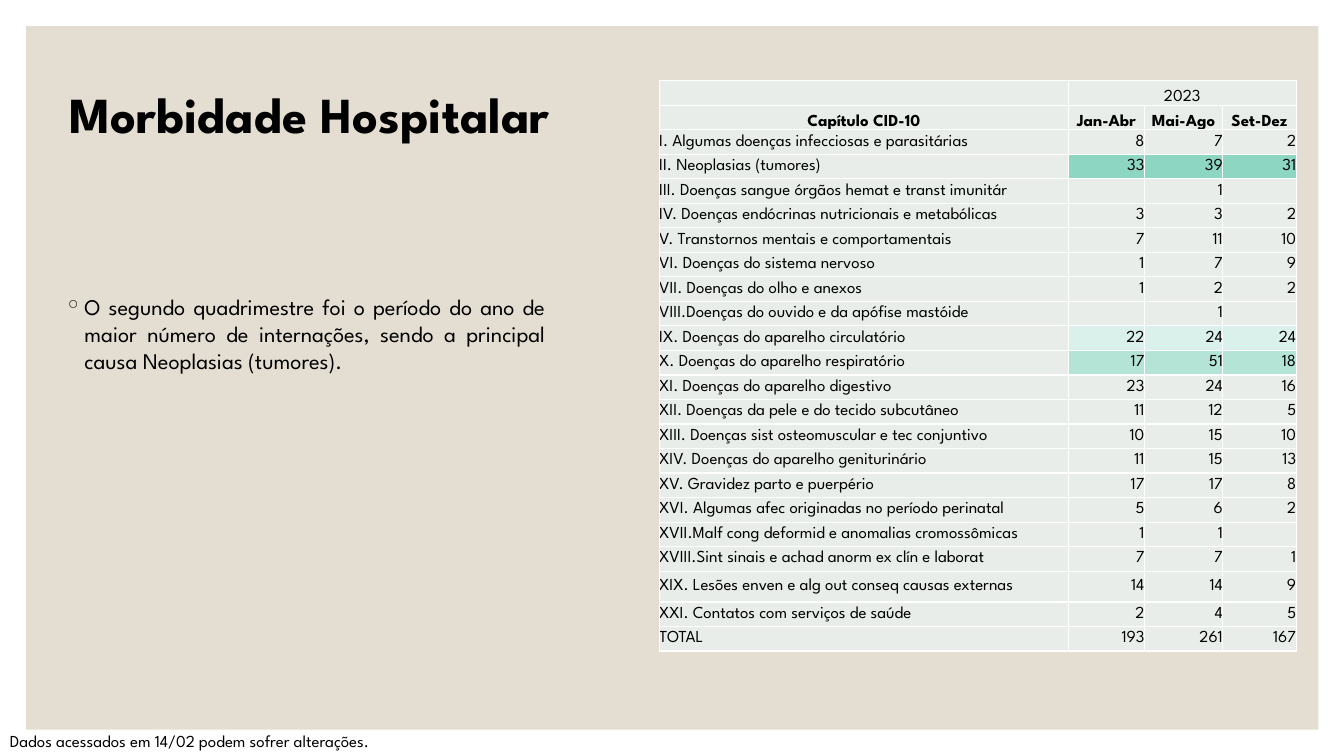
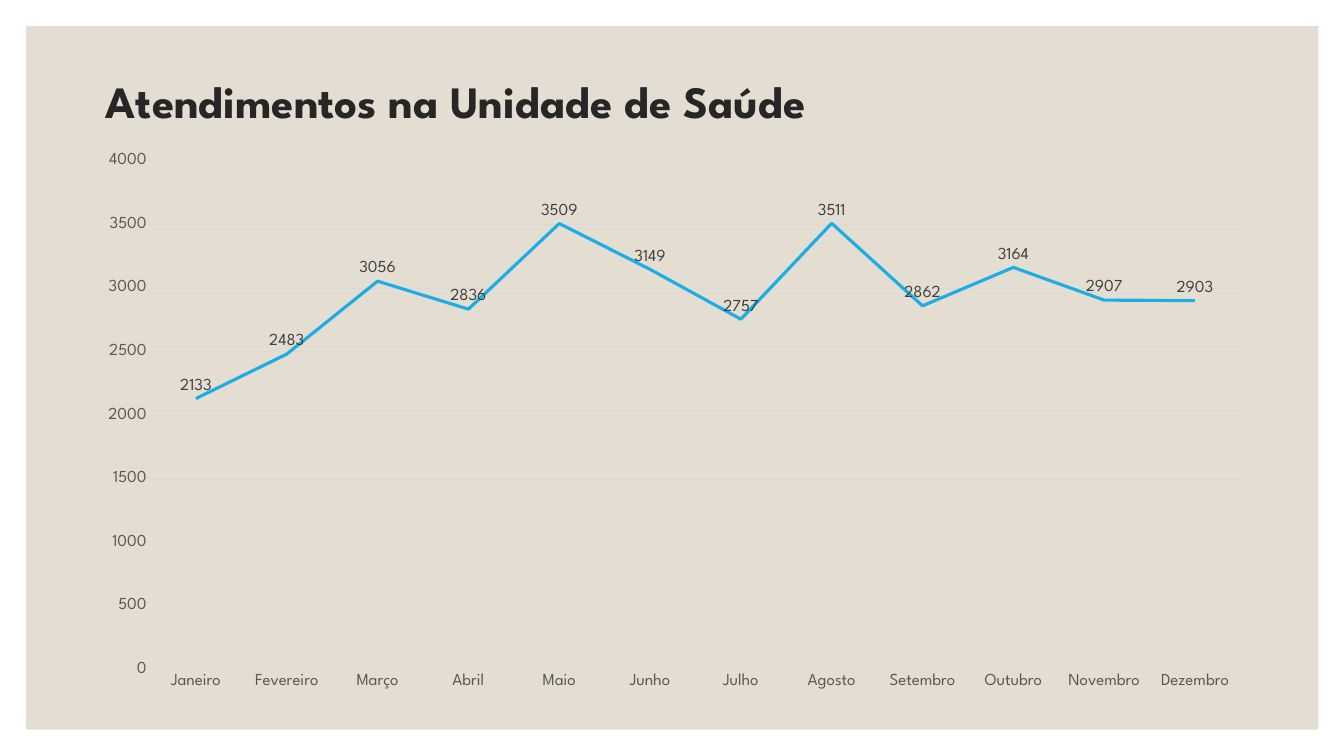
from dataclasses import dataclass

from lxml import etree
from pptx import Presentation
from pptx.chart.data import CategoryChartData
from pptx.dml.color import RGBColor
from pptx.enum.chart import XL_CHART_TYPE, XL_LABEL_POSITION, XL_TICK_MARK
from pptx.enum.shapes import MSO_SHAPE
from pptx.enum.text import MSO_ANCHOR, PP_ALIGN
from pptx.oxml.ns import qn
from pptx.util import Pt

LINE = XL_CHART_TYPE.LINE
ABOVE = XL_LABEL_POSITION.ABOVE
NO_TICK = XL_TICK_MARK.NONE
RECT = MSO_SHAPE.RECTANGLE
TOP, MIDDLE, BOTTOM = MSO_ANCHOR.TOP, MSO_ANCHOR.MIDDLE, MSO_ANCHOR.BOTTOM
LEFT, CENTER = PP_ALIGN.LEFT, PP_ALIGN.CENTER
RIGHT, JUSTIFY = PP_ALIGN.RIGHT, PP_ALIGN.JUSTIFY


@dataclass(frozen=True)
class Theme:
    font: str = "League Spartan"
    band: str = "E3DED1"
    ink: str = "000000"
    dark: str = "262626"
    label: str = "404040"
    axis: str = "595959"
    grid: str = "D9D9D9"
    line: str = "1CADE4"
    cell: str = "E8EDE9"
    rule: str = "FFFFFF"
    high: str = "8DD6C1"
    mid: str = "B3E4D6"
    low: str = "D9F1EA"
    large: int = 36
    head: int = 32
    body: int = 16
    small: int = 12


THEME = Theme()

CHAPTERS = [
    ("I. Algumas doenças infecciosas e parasitárias", 8, 7, 2),
    ("II. Neoplasias (tumores)", 33, 39, 31),
    ("III. Doenças sangue órgãos hemat e transt imunitár", "", 1, ""),
    ("IV. Doenças endócrinas nutricionais e metabólicas", 3, 3, 2),
    ("V. Transtornos mentais e comportamentais", 7, 11, 10),
    ("VI. Doenças do sistema nervoso", 1, 7, 9),
    ("VII. Doenças do olho e anexos", 1, 2, 2),
    ("VIII.Doenças do ouvido e da apófise mastóide", "", 1, ""),
    ("IX. Doenças do aparelho circulatório", 22, 24, 24),
    ("X. Doenças do aparelho respiratório", 17, 51, 18),
    ("XI. Doenças do aparelho digestivo", 23, 24, 16),
    ("XII. Doenças da pele e do tecido subcutâneo", 11, 12, 5),
    ("XIII. Doenças sist osteomuscular e tec conjuntivo", 10, 15, 10),
    ("XIV. Doenças do aparelho geniturinário", 11, 15, 13),
    ("XV. Gravidez parto e puerpério", 17, 17, 8),
    ("XVI. Algumas afec originadas no período perinatal", 5, 6, 2),
    ("XVII.Malf cong deformid e anomalias cromossômicas", 1, 1, ""),
    ("XVIII.Sint sinais e achad anorm ex clín e laborat", 7, 7, 1),
    ("XIX. Lesões enven e alg out conseq causas externas", 14, 14, 9),
    ("XXI. Contatos com serviços de saúde", 2, 4, 5),
    ("TOTAL", 193, 261, 167),
]
HEADS = [
    ("", "2023", "", ""),
    ("Capítulo CID-10", "Jan-Abr", "Mai-Ago", "Set-Dez"),
]
TINTS = {"II.": THEME.high, "IX.": THEME.low, "X.": THEME.mid}
TALL = "XIX."

VISITS = {
    "Janeiro": 2133, "Fevereiro": 2483, "Março": 3056, "Abril": 2836,
    "Maio": 3509, "Junho": 3149, "Julho": 2757, "Agosto": 3511,
    "Setembro": 2862, "Outubro": 3164, "Novembro": 2907, "Dezembro": 2903,
}


def color(code):
    return RGBColor.from_string(code)


class Deck:
    def __init__(self, theme):
        self.theme = theme
        self.prs = Presentation()
        self.prs.slide_width, self.prs.slide_height = Pt(960), Pt(540)
        self.slide = None

    def page(self):
        """Start a blank slide with the shared band."""
        self.slide = self.prs.slides.add_slide(self.prs.slide_layouts[6])
        band = self.slide.shapes.add_shape(
            RECT, Pt(18.7), Pt(18.7), Pt(923), Pt(502.5))
        band.shadow.inherit = False
        band.fill.solid()
        band.fill.fore_color.rgb = color(self.theme.band)
        band.line.fill.background()

    def style(self, font, size, ink, bold=False):
        font.name, font.size, font.bold = self.theme.font, Pt(size), bold
        font.color.rgb = color(ink)

    def text(self, box, words, size, ink, bold=False, anchor=TOP):
        shape = self.slide.shapes.add_textbox(*map(Pt, box))
        frame = shape.text_frame
        frame.word_wrap = True
        frame.vertical_anchor = anchor
        frame.text = words
        para = frame.paragraphs[0]
        self.style(para.runs[0].font, size, ink, bold)
        return para

    def title(self, box, words, size, ink):
        para = self.text(box, words, size, ink, True, MIDDLE)
        para.line_spacing = 0.9

    def bullet(self, box, words):
        para = self.text(box, words, self.theme.body, self.theme.ink)
        para.alignment = JUSTIFY
        para.space_before = Pt(9)
        props = para._p.get_or_add_pPr()
        props.set("marL", str(Pt(14.4)))
        props.set("indent", str(-Pt(14.4)))
        tint = etree.SubElement(props, qn("a:buClr"))
        etree.SubElement(tint, qn("a:srgbClr"), val=self.theme.dark)
        etree.SubElement(props, qn("a:buChar"), char="◦")

    def cell(self, cell, words, fill, align, anchor=MIDDLE, bold=False):
        cell.margin_left = cell.margin_right = 0
        cell.margin_top = cell.margin_bottom = 0
        cell.vertical_anchor = anchor
        cell.text = str(words)
        para = cell.text_frame.paragraphs[0]
        para.alignment = align
        for run in para.runs:
            self.style(run.font, self.theme.small, self.theme.ink, bold)
        if not para.runs:
            end = para._p.get_or_add_endParaRPr()
            end.set("sz", str(self.theme.small * 100))
        props = cell._tc.get_or_add_tcPr()
        for side in ("a:lnL", "a:lnR", "a:lnT", "a:lnB"):
            edge = etree.SubElement(props, qn(side), w=str(Pt(1)))
            solid = etree.SubElement(edge, qn("a:solidFill"))
            etree.SubElement(solid, qn("a:srgbClr"), val=self.theme.rule)
        cell.fill.solid()
        cell.fill.fore_color.rgb = color(fill)

    def table(self, left, top, widths, height, tall):
        rows = HEADS + CHAPTERS
        table = self.slide.shapes.add_table(
            len(rows), len(widths), Pt(left), Pt(top),
            Pt(sum(widths)), Pt(height * len(rows))).table
        for col, width in zip(table.columns, widths):
            col.width = Pt(width)
        for r, row in enumerate(rows):
            first = row[0].split(" ")[0]
            table.rows[r].height = Pt(tall if first == TALL else height)
            for c, words in enumerate(row):
                cell = table.cell(r, c)
                if r < len(HEADS):
                    self.cell(cell, words, self.theme.cell, CENTER,
                              BOTTOM, bold=r == 1)
                elif c == 0:
                    self.cell(cell, words, self.theme.cell, LEFT)
                else:
                    fill = TINTS.get(first, self.theme.cell)
                    self.cell(cell, words, fill, RIGHT)
        table.cell(0, 1).merge(table.cell(0, 3))

    def chart(self, box, values):
        look = self.theme
        data = CategoryChartData()
        data.categories = list(values)
        data.add_series("Series 1", list(values.values()))
        chart = self.slide.shapes.add_chart(LINE, *map(Pt, box), data).chart
        chart.has_legend = chart.has_title = False
        self.style(chart.font, 10, look.ink)

        months, scale = chart.category_axis, chart.value_axis
        for axis in (months, scale):
            axis.major_tick_mark = axis.minor_tick_mark = NO_TICK
            self.style(axis.tick_labels.font, look.small, look.axis)
        scale.minimum_scale, scale.maximum_scale = 0, 4000
        scale.major_unit = 500
        scale.format.line.fill.background()
        scale.has_major_gridlines = True
        for line in (months.format.line, scale.major_gridlines.format.line):
            line.color.rgb = color(look.grid)
            line.width = Pt(0.75)

        plot = chart.plots[0]
        plot.vary_by_categories = False
        series = plot.series[0]
        series.smooth = False
        series.format.line.color.rgb = color(look.line)
        series.format.line.width = Pt(2.25)
        labels = series.data_labels
        labels.show_value = True
        labels.position = ABOVE
        self.style(labels.font, look.small, look.label)


def main():
    deck = Deck(THEME)

    deck.page()
    deck.title((42.5, 31.7, 828, 104.4), "Morbidade Hospitalar",
               THEME.large, THEME.ink)
    deck.bullet((38.9, 206, 357.8, 192),
                "O segundo quadrimestre foi o período do ano de maior número "
                "de internações, sendo a principal causa Neoplasias "
                "(tumores).")
    deck.table(470.9, 57.6, (292.3, 54.3, 56, 52.4), 17.54, 22)
    deck.text((0, 518.4, 443.5, 21.6),
              "Dados acessados em 14/02 podem sofrer alterações.",
              THEME.small, THEME.ink)

    deck.page()
    deck.title((68.4, 39.6, 671.8, 69), "Atendimentos na Unidade de Saúde",
               THEME.head, THEME.dark)
    deck.chart((60.5, 101.5, 842.4, 399), VISITS)

    deck.prs.save("out.pptx")


if __name__ == "__main__":
    main()
